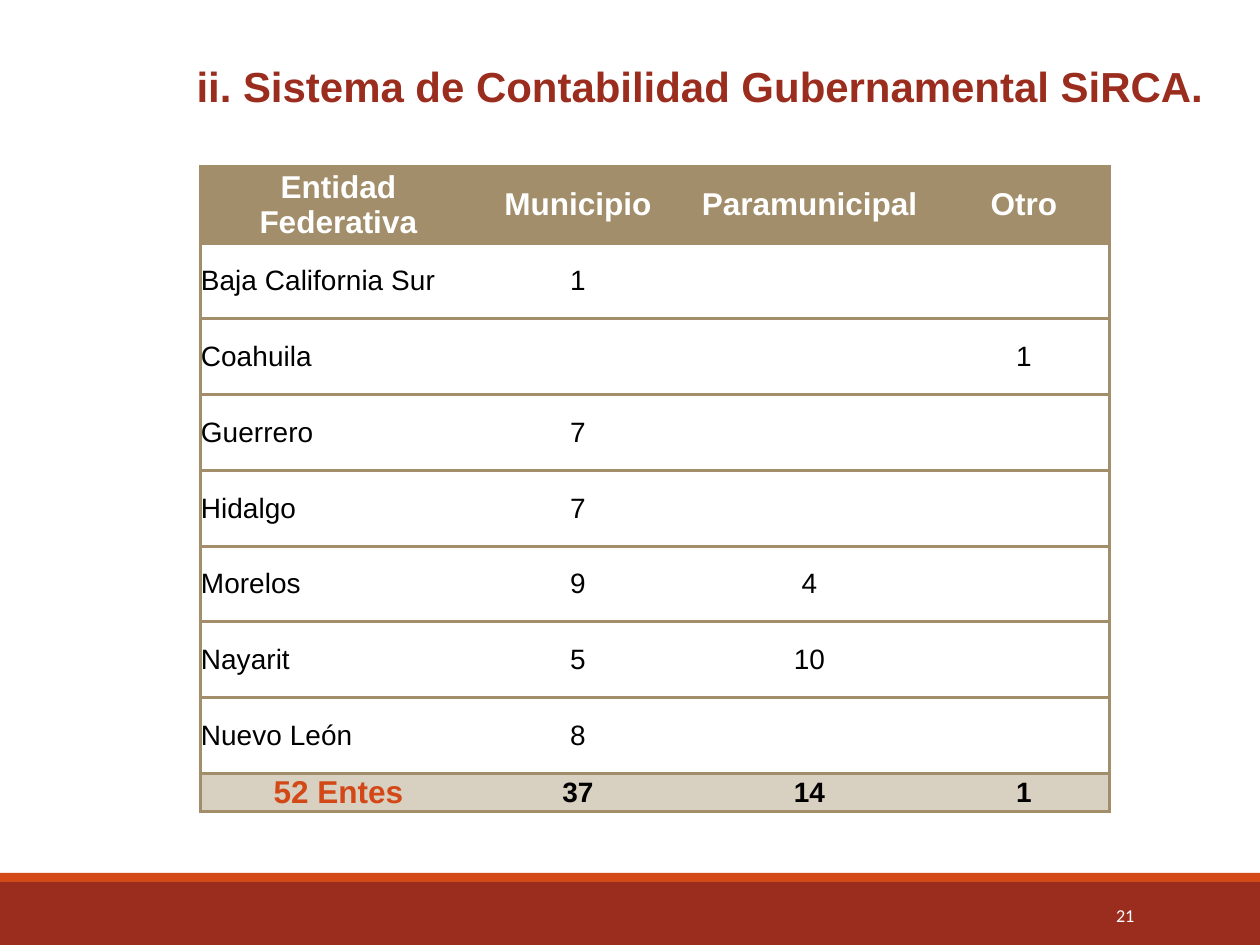
from lxml import etree
from pptx import Presentation
from pptx.dml.color import RGBColor
from pptx.enum.shapes import MSO_SHAPE
from pptx.enum.text import MSO_ANCHOR, PP_ALIGN
from pptx.oxml.ns import qn
from pptx.util import Pt

RECT = MSO_SHAPE.RECTANGLE
MIDDLE, TOP = MSO_ANCHOR.MIDDLE, MSO_ANCHOR.TOP
LEFT, CENTER, RIGHT = PP_ALIGN.LEFT, PP_ALIGN.CENTER, PP_ALIGN.RIGHT

RED, ORANGE, TAN, SAND = "9B2D1F", "D34817", "A28E6A", "D8D0C0"
WHITE, BLACK = "FFFFFF", "000000"

WIDTH, HEIGHT = 360, 270
BANDS = [(252, 18, RED), (249.4, 2.6, ORANGE)]  # top, height, fill
TITLE = "ii. Sistema de Contabilidad Gubernamental SiRCA."
PAGE = "21"

ROWS = [
    ("Entidad Federativa", "Municipio", "Paramunicipal", "Otro"),
    ("Baja California Sur", "1", "", ""),
    ("Coahuila", "", "", "1"),
    ("Guerrero", "7", "", ""),
    ("Hidalgo", "7", "", ""),
    ("Morelos", "9", "4", ""),
    ("Nayarit", "5", "10", ""),
    ("Nuevo León", "8", "", ""),
    ("52 Entes", "37", "14", "1"),
]
COLS = [78.5, 58.5, 73.8, 48.8]
TABLE_LEFT, TABLE_TOP = 57.4, 47.5
HEAD_H, BODY_H, TOTAL_H = 22, 21.27, 10.9

TITLE_FONT = {"name": "Arial", "size": Pt(12), "bold": True}
PAGE_FONT = {"name": "Calibri", "size": Pt(5.2), "bold": False}
HEAD_FONT = {"name": "Arial", "size": Pt(9), "bold": True}
BODY_FONT = {"name": "Arial", "size": Pt(8), "bold": False}
TOTAL_FONT = {"name": "Arial", "size": Pt(8), "bold": True}


def rgb(color):
    return RGBColor.from_string(color)


def write(frame, text, font, color, align):
    para = frame.paragraphs[0]
    para.alignment = align
    if text:
        run = para.add_run()
        run.text = text
        for key, value in font.items():
            setattr(run.font, key, value)
        run.font.color.rgb = rgb(color)


def add_text(slide, box, text, font, color, anchor):
    frame = slide.shapes.add_textbox(*map(Pt, box)).text_frame
    frame.word_wrap = True
    frame.vertical_anchor = anchor
    write(frame, text, font, color, RIGHT)


def add_edges(cell, drawn):
    """Draw the listed cell sides and hide the others."""
    props = cell._tc.get_or_add_tcPr()
    for side in "LRTB":
        line = etree.SubElement(props, qn(f"a:ln{side}"), w=str(Pt(1)))
        if side in drawn:
            fill = etree.SubElement(line, qn("a:solidFill"))
            etree.SubElement(fill, qn("a:srgbClr"), val=TAN)
        else:
            etree.SubElement(line, qn("a:noFill"))


def look(row, col):
    """Return font, text colour, fill and alignment of a cell."""
    if row == 0:
        return HEAD_FONT, WHITE, TAN, CENTER
    if row < len(ROWS) - 1:
        return BODY_FONT, BLACK, WHITE, CENTER if col else LEFT
    if col == 0:
        return HEAD_FONT, ORANGE, SAND, CENTER
    return TOTAL_FONT, BLACK, SAND, CENTER


def add_table(slide):
    heights = [HEAD_H] + [BODY_H] * (len(ROWS) - 2) + [TOTAL_H]
    box = (TABLE_LEFT, TABLE_TOP, sum(COLS), sum(heights))
    table = slide.shapes.add_table(len(ROWS), len(COLS), *map(Pt, box)).table
    table.first_row = table.horz_banding = False
    for col, width in enumerate(COLS):
        table.columns[col].width = Pt(width)
    for row, texts in enumerate(ROWS):
        table.rows[row].height = Pt(heights[row])
        for col, text in enumerate(texts):
            cell = table.cell(row, col)
            for side in ("left", "right", "top", "bottom"):
                setattr(cell, f"margin_{side}", 0)
            cell.vertical_anchor = MIDDLE
            ends = {0: "L", len(COLS) - 1: "R"}
            add_edges(cell, "TB" + ends.get(col, ""))
            font, color, fill, align = look(row, col)
            cell.fill.solid()
            cell.fill.fore_color.rgb = rgb(fill)
            write(cell.text_frame, text, font, color, align)


def main():
    deck = Presentation()
    deck.slide_width, deck.slide_height = Pt(WIDTH), Pt(HEIGHT)
    slide = deck.slides.add_slide(deck.slide_layouts[6])
    for top, height, color in BANDS:
        band = slide.shapes.add_shape(RECT, 0, Pt(top), Pt(WIDTH), Pt(height))
        band.shadow.inherit = False
        band.fill.solid()
        band.fill.fore_color.rgb = rgb(color)
        band.line.fill.background()
    add_text(slide, (37.4, 13.9, 313.9, 21.6), TITLE, TITLE_FONT, RED, TOP)
    add_text(slide, (292.3, 254.4, 38.9, 14.4), PAGE, PAGE_FONT, WHITE, MIDDLE)
    add_table(slide)
    deck.save("out.pptx")


if __name__ == "__main__":
    main()
